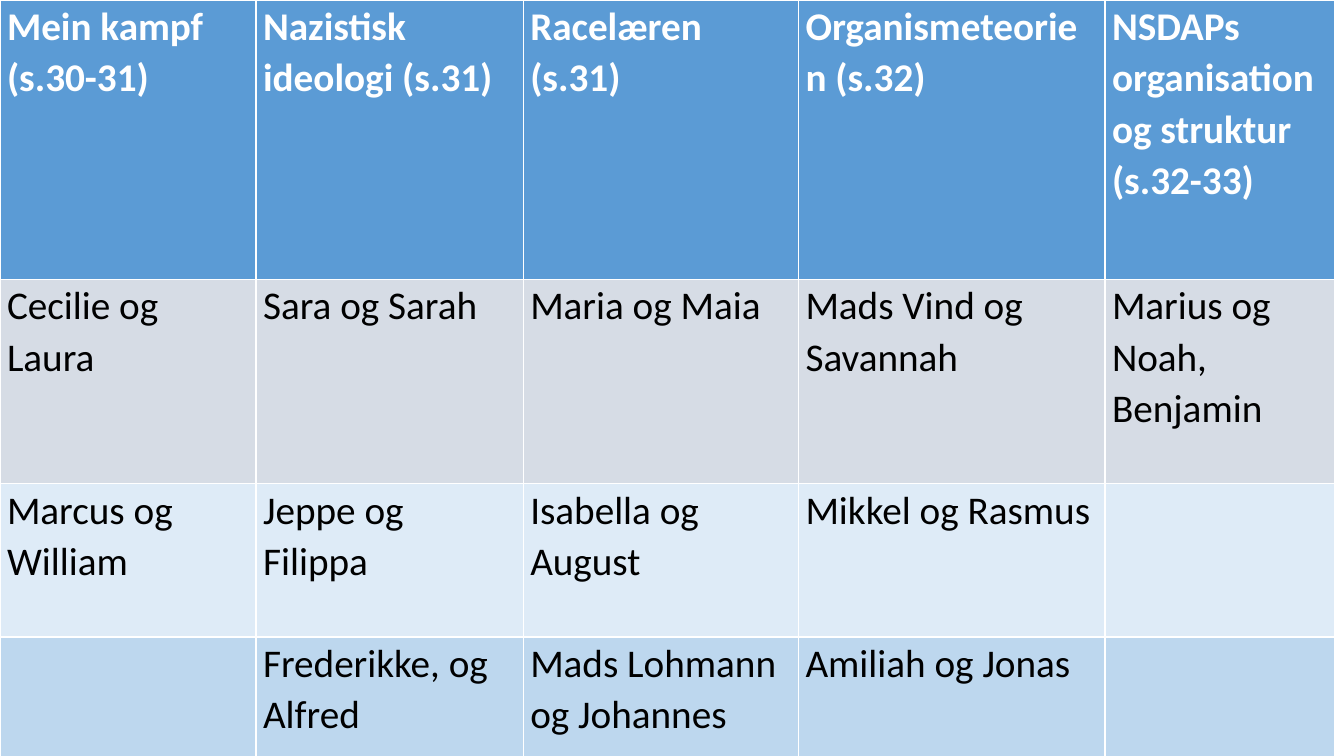
from pptx import Presentation
from pptx import util as u
from pptx.dml.color import RGBColor
from pptx.enum import text

COLUMN_WIDTHS = [2.54, 2.65, 2.73, 3.04, 2.28]
ROW_HEIGHTS = [2.77, 2.03, 1.52, 1.38]
ROW_FILLS = ["5B9BD5", "D6DCE5", "DEEBF7", "BDD7EE"]
GROUPS = [
    ["Mein kampf\n(s.30-31)", "Nazistisk ideologi (s.31)", "Racelæren (s.31)",
     "Organismeteorien (s.32)", "NSDAPs organisation og struktur (s.32-33)"],
    ["Cecilie og Laura", "Sara og Sarah", "Maria og Maia",
     "Mads Vind og Savannah", "Marius og Noah, Benjamin"],
    ["Marcus og William", "Jeppe og Filippa", "Isabella og August",
     "Mikkel og Rasmus", ""],
    ["", "Frederikke, og Alfred", "Mads Lohmann og Johannes",
     "Amiliah og Jonas", ""],
]


def color(value):
    """Turn a hex string into a colour."""
    return RGBColor.from_string(value)


def format_cell(cell, content, fill, is_header):
    """Fill one cell and set its text, margins and font."""
    cell.fill.solid()
    cell.fill.fore_color.rgb = color(fill)
    cell.margin_left = cell.margin_right = u.Inches(0.07)
    cell.margin_top = cell.margin_bottom = 0
    cell.vertical_anchor = text.MSO_ANCHOR.TOP
    cell.text = content
    for para in cell.text_frame.paragraphs:
        para.line_spacing = 1.07
        para.font.name = "Calibri"
        para.font.size = u.Pt(28)
        para.font.bold = is_header
        para.font.color.rgb = color("FFFFFF" if is_header else "000000")


def add_group_table(page, left, top):
    """Place the table of topics and student groups."""
    table = page.shapes.add_table(
        len(ROW_HEIGHTS), len(COLUMN_WIDTHS), u.Inches(left), u.Inches(top),
        u.Inches(sum(COLUMN_WIDTHS)), u.Inches(sum(ROW_HEIGHTS))).table
    for column, width in zip(table.columns, COLUMN_WIDTHS):
        column.width = u.Inches(width)
    for index, (row, height) in enumerate(zip(table.rows, ROW_HEIGHTS)):
        row.height = u.Inches(height)
        for cell, content in zip(row.cells, GROUPS[index]):
            format_cell(cell, content, ROW_FILLS[index], index == 0)


def main():
    """Build the deck and save it."""
    deck = Presentation()
    deck.slide_width, deck.slide_height = u.Inches(13.33), u.Inches(7.5)
    page = deck.slides.add_slide(deck.slide_layouts[6])
    add_group_table(page, 0, 0)
    deck.save("out.pptx")


if __name__ == "__main__":
    main()
